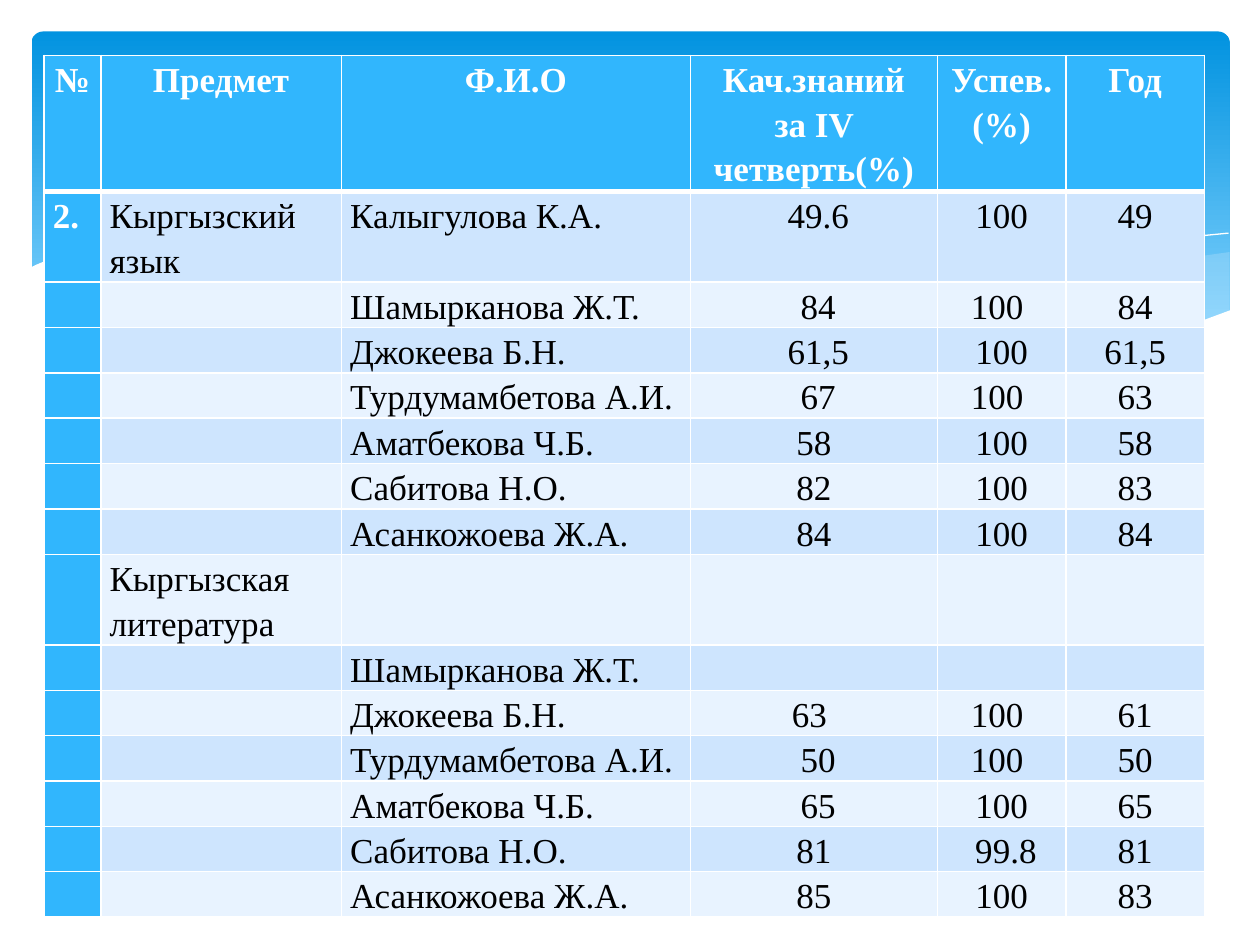
from dataclasses import dataclass

from lxml import etree
from pptx import Presentation
from pptx import util as u
from pptx.dml.color import RGBColor
from pptx.enum import shapes, text
from pptx.oxml.ns import qn


@dataclass(frozen=True)
class Theme:
    font: str = "Times New Roman"
    size: int = 20
    spacing: float = 1.15
    white: str = "FFFFFF"
    black: str = "000000"
    accent: str = "31B6FD"
    bands: tuple = ("CEE5FE", "E8F3FF")
    sky: tuple = ((0, "0293E0"), (0.9, "83D3FE"))
    wave: str = "C6E7FC"
    rule: float = 1
    header_rule: float = 3


NBSP = chr(160)  # written as ~ in the rows below

HEADER = ("№", "Предмет", "Ф.И.О", "Кач.знаний\nза IV четверть(%)", "Успев. (%)", "Год")
ROWS = (
    ("2.", "Кыргызский язык", "Калыгулова К.А.", "~49.6", "100", "49"),
    ("", "", "Шамырканова Ж.Т.", "~84", "100~", "84"),
    ("", "", "Джокеева Б.Н.", "~61,5", "100", "61,5"),
    ("", "", "Турдумамбетова А.И.", "~67", "100~", "63"),
    ("", "", "Аматбекова Ч.Б.", "58", "100", "58"),
    ("", "", "Сабитова Н.О.", "82", "100", "83"),
    ("", "", "Асанкожоева Ж.А.", "84", "100", "84"),
    ("", "Кыргызская литература", "", "", "", ""),
    ("", "", "Шамырканова Ж.Т.", "", "", ""),
    ("", "", "Джокеева Б.Н.", "63~", "100~", "61"),
    ("", "", "Турдумамбетова А.И.", "~50", "100~", "50"),
    ("", "", "Аматбекова Ч.Б.", "~65", "100", "65"),
    ("", "", "Сабитова Н.О.", "81", "~99.8", "81"),
    ("", "", "Асанкожоева Ж.А.", "85", "100", "83"),
)
COL_WIDTHS = (0.45, 1.91, 2.77, 1.96, 1.02, 1.1)
HEADER_HEIGHT, ROW_HEIGHT = 1.08, 0.36

# Wave outlines, in inches
WAVE_RIGHT = ((9.76, 2), (9.48, 2.04), (9.06, 2.13), (8.61, 2.23), (8.05, 2.37),
              (7.29, 2.53), (6.61, 2.65), (7.05, 2.71), (7.57, 2.76), (8.14, 2.78),
              (8.63, 2.75), (9.05, 2.69), (9.42, 2.59), (9.76, 2.47))
WAVE_MIDDLE = ((8.93, 2.73), (8.37, 2.65), (7.75, 2.54), (7.06, 2.4), (6.29, 2.22),
               (5.69, 2.08), (5.14, 1.98), (4.42, 1.89), (3.8, 1.85), (3.28, 1.87),
               (2.86, 1.91), (3.62, 2.03), (4.49, 2.22), (5.3, 2.4), (6.01, 2.55),
               (6.65, 2.66), (7.22, 2.74), (7.85, 2.78), (8.48, 2.77))
CREST_LONG = ((3.09, 1.95), (3.53, 1.89), (4.16, 1.87), (4.89, 1.9), (5.56, 1.97),
              (6.36, 2.08), (7.27, 2.26), (8.31, 2.51), (9.07, 2.72))
CREST_SHORT = ((6.13, 2.57), (6.95, 2.35), (7.76, 2.16), (8.66, 1.99), (9.24, 1.9),
               (9.75, 1.85))
WAVE_FRONT = ((9.77, 2.46), (9.5, 2.56), (9.2, 2.65), (8.75, 2.73), (8.09, 2.77),
              (7.44, 2.74), (6.68, 2.65), (5.79, 2.5), (4.47, 2.2), (3.65, 2.02),
              (2.92, 1.9), (2.3, 1.85), (1.77, 1.84), (1.32, 1.86), (0.95, 1.91),
              (0.67, 1.97), (0.46, 2.03), (0.29, 2.1), (0.23, 2.13), (0.23, 3.29),
              (9.77, 3.29))


def rgb(color):
    return RGBColor.from_string(color)


def write(tf, content, *, theme, color, bold=False, align=None):
    p = tf.paragraphs[0]
    p.text = content.replace("~", NBSP)
    p.alignment = align
    p.line_spacing = theme.spacing
    for r in p.runs:
        r.font.name = theme.font
        r.font.size = u.Pt(theme.size)
        r.font.bold = bold
        r.font.color.rgb = rgb(color)


class Deck:
    def __init__(self, theme):
        self.theme = theme
        self.prs = Presentation()
        self.prs.slide_width, self.prs.slide_height = u.Inches(10), u.Inches(7.5)
        self.s = self.prs.slides.add_slide(self.prs.slide_layouts[6])

    def gradient_panel(self, left, top, width, height, radius):
        sp = self.s.shapes.add_shape(shapes.MSO_SHAPE.ROUNDED_RECTANGLE,
                                     *map(u.Inches, (left, top, width, height)))
        sp.adjustments[0] = radius
        sp.shadow.inherit = False
        sp.line.fill.background()
        sp.fill.gradient()
        sp.fill.gradient_angle = 270
        for stop, (position, color) in zip(sp.fill.gradient_stops, self.theme.sky):
            stop.position = position
            stop.color.rgb = rgb(color)

    def outline(self, points, closed):
        start, *rest = [tuple(map(u.Inches, point)) for point in points]
        builder = self.s.shapes.build_freeform(*start)
        builder.add_line_segments(rest, close=closed)
        sp = builder.convert_to_shape()
        sp.shadow.inherit = False
        return sp

    def wave(self, points, color, opacity=100):
        sp = self.outline(points, closed=True)
        sp.line.fill.background()
        sp.fill.solid()
        sp.fill.fore_color.rgb = rgb(color)
        if opacity < 100:
            clr = sp.element.spPr.find(".//" + qn("a:srgbClr"))
            etree.SubElement(clr, qn("a:alpha"), val=str(opacity * 1000))

    def crest(self, points):
        sp = self.outline(points, closed=False)
        sp.fill.background()
        sp.line.color.rgb = rgb(self.theme.white)
        sp.line.width = u.Pt(0)

    def border(self, cell, side, width):
        tc_pr = cell._tc.get_or_add_tcPr()
        ln = etree.SubElement(tc_pr, qn("a:ln" + side), w=str(u.Pt(width)))
        fill = etree.SubElement(ln, qn("a:solidFill"))
        etree.SubElement(fill, qn("a:srgbClr"), val=self.theme.white)

    def cell(self, cell, row, col, content):
        th = self.theme
        header, accent = row == 0, row == 0 or col == 0
        cell.margin_left = cell.margin_right = u.Inches(0.06 if header else 0.07)
        cell.margin_top = cell.margin_bottom = 0
        centred = header or col > 2
        write(cell.text_frame, content, theme=th, bold=accent,
              color=th.white if accent else th.black,
              align=text.PP_ALIGN.CENTER if centred else text.PP_ALIGN.LEFT)
        # Borders come before the fill in the cell properties
        for side in "LRTB":
            thick = (row, side) in ((0, "B"), (1, "T"))
            self.border(cell, side, th.header_rule if thick else th.rule)
        cell.fill.solid()
        cell.fill.fore_color.rgb = rgb(th.accent if accent else th.bands[(row - 1) % 2])

    def table(self, left, top, rows, widths, heights):
        box = map(u.Inches, (left, top, sum(widths), sum(heights)))
        table = self.s.shapes.add_table(len(rows), len(widths), *box).table
        table.horz_banding = False
        for column, width in zip(table.columns, widths):
            column.width = u.Inches(width)
        for i, (values, height) in enumerate(zip(rows, heights)):
            table.rows[i].height = u.Inches(height)
            for j, value in enumerate(values):
                self.cell(table.cell(i, j), i, j, value)


def main():
    theme = Theme()
    deck = Deck(theme)

    # Blue panel with waves
    deck.gradient_panel(0.25, 0.25, 9.51, 2.7, radius=0.034)
    deck.wave(WAVE_RIGHT, theme.wave, opacity=29)
    deck.wave(WAVE_MIDDLE, theme.wave, opacity=40)
    deck.crest(CREST_LONG)
    deck.crest(CREST_SHORT)
    deck.wave(WAVE_FRONT, theme.white)

    # Results table: rows that name a subject are two lines high
    heights = [HEADER_HEIGHT] + [ROW_HEIGHT * (2 if row[1] else 1) for row in ROWS]
    deck.table(0.35, 0.44, (HEADER, *ROWS), COL_WIDTHS, heights)

    deck.prs.save("out.pptx")


if __name__ == "__main__":
    main()
